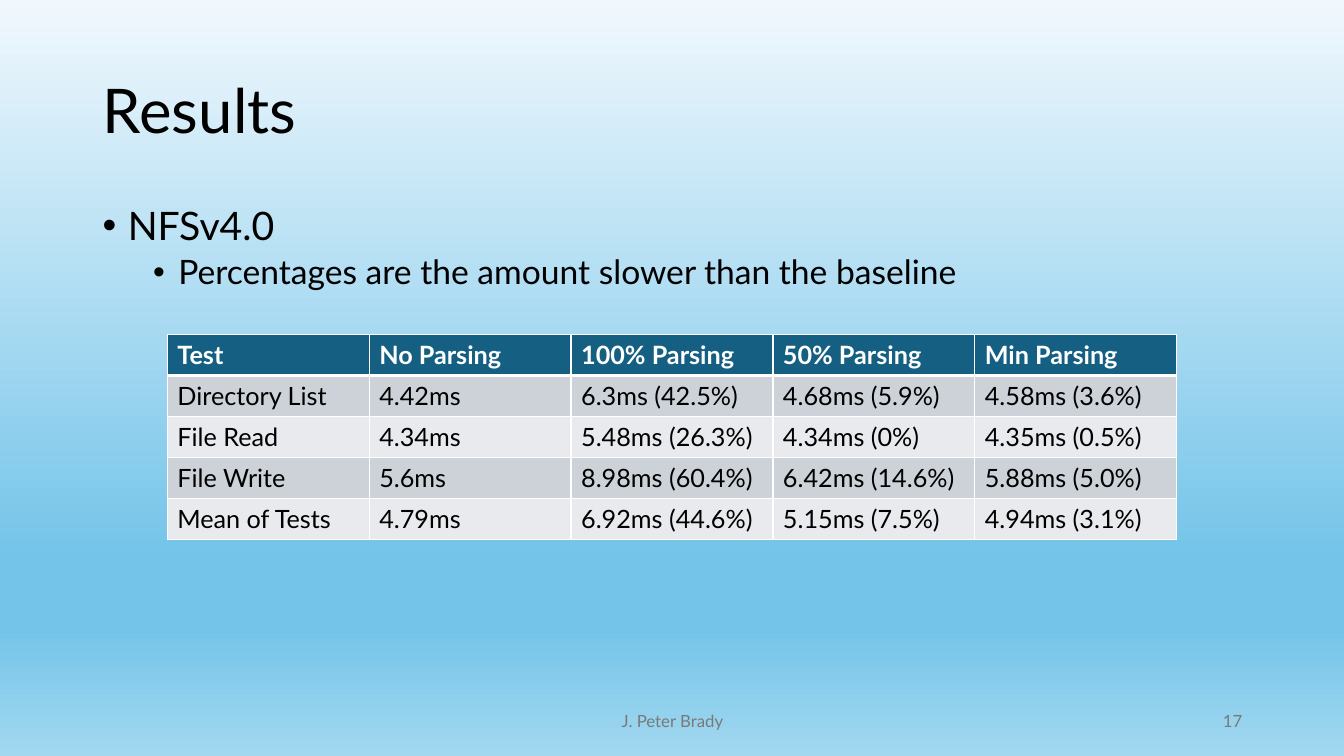
from dataclasses import dataclass

import lxml.etree
import pptx
import pptx.dml.color
import pptx.enum.text
import pptx.oxml.ns
import pptx.util

Inches = pptx.util.Inches
Pt = pptx.util.Pt
RGBColor = pptx.dml.color.RGBColor
Align = pptx.enum.text.PP_ALIGN
Anchor = pptx.enum.text.MSO_ANCHOR
qn = pptx.oxml.ns.qn

FONT = "Lato"
BLACK = RGBColor(0x00, 0x00, 0x00)
WHITE = RGBColor(0xFF, 0xFF, 0xFF)
GRAY = RGBColor(0x79, 0x79, 0x79)
HEAD = RGBColor(0x15, 0x60, 0x82)
BANDS = (RGBColor(0xE8, 0xEA, 0xED), RGBColor(0xCC, 0xD2, 0xD8))
SKY = (
    (0, RGBColor(0xF0, 0xF8, 0xFD)),
    (74, RGBColor(0x74, 0xC4, 0xE9)),
    (83, RGBColor(0x74, 0xC4, 0xE9)),
    (100, RGBColor(0xA2, 0xD8, 0xF0)),
)
ROWS = (
    ("Test", "No Parsing", "100% Parsing", "50% Parsing", "Min Parsing"),
    ("Directory List", "4.42ms", "6.3ms (42.5%)", "4.68ms (5.9%)", "4.58ms (3.6%)"),
    ("File Read", "4.34ms", "5.48ms (26.3%)", "4.34ms (0%)", "4.35ms (0.5%)"),
    ("File Write", "5.6ms", "8.98ms (60.4%)", "6.42ms (14.6%)", "5.88ms (5.0%)"),
    ("Mean of Tests", "4.79ms", "6.92ms (44.6%)", "5.15ms (7.5%)", "4.94ms (3.1%)"),
)


@dataclass
class Bullet:
    text: str
    size: int
    level: int
    left: float
    space: int


@dataclass
class Note:
    text: str
    left: float
    width: float
    align: Align


BULLETS = (
    Bullet("NFSv4.0", 28, 0, 0.25, 10),
    Bullet("Percentages are the amount slower than the baseline", 24, 1, 0.75, 5),
)
NOTES = (
    Note("17", 9.42, 3, Align.RIGHT),
    Note("J. Peter Brady", 4.42, 4.5, Align.CENTER),
)


def add_run(para, text: str, size: int, color: RGBColor, bold: bool = False) -> None:
    run = para.add_run()
    run.text = text
    run.font.name = FONT
    run.font.size = Pt(size)
    run.font.bold = bold
    run.font.color.rgb = color


def add_fill(parent, color: RGBColor) -> None:
    fill = lxml.etree.SubElement(parent, qn("a:solidFill"))
    lxml.etree.SubElement(fill, qn("a:srgbClr"), val=str(color))


def paint_sky(slide) -> None:
    fill = slide.background.fill
    fill.gradient()
    fill.gradient_angle = 270
    stops = slide.element.find(".//" + qn("a:gsLst"))
    for stop in list(stops):
        stops.remove(stop)
    for pos, color in SKY:
        stop = lxml.etree.SubElement(stops, qn("a:gs"), pos=str(pos * 1000))
        lxml.etree.SubElement(stop, qn("a:srgbClr"), val=str(color))


def draw_title(slide) -> None:
    title = slide.shapes.title
    title.left, title.top = Inches(0.92), Inches(0.4)
    title.width, title.height = Inches(11.5), Inches(1.45)
    title.text_frame.vertical_anchor = Anchor.MIDDLE
    para = title.text_frame.paragraphs[0]
    para.alignment = Align.LEFT
    para.line_spacing = 0.9
    add_run(para, "Results", 44, BLACK)


def add_box(slide, left: float, top: float, width: float, height: float):
    box = slide.shapes.add_textbox(
        Inches(left), Inches(top), Inches(width), Inches(height)
    )
    box.text_frame.word_wrap = True
    return box.text_frame


def draw_list(slide) -> None:
    frame = add_box(slide, 0.92, 2, 11.5, 1.32)
    for num, item in enumerate(BULLETS):
        para = frame.add_paragraph() if num else frame.paragraphs[0]
        para.level = item.level
        para.line_spacing = 0.9
        para.space_before = Pt(item.space)
        props = para._p.get_or_add_pPr()
        props.set("marL", str(Inches(item.left)))
        props.set("indent", str(Inches(-0.25)))
        lxml.etree.SubElement(props, qn("a:buFont"), typeface="Arial")
        lxml.etree.SubElement(props, qn("a:buChar"), char="•")
        add_run(para, item.text, item.size, BLACK)


def draw_note(slide, note: Note) -> None:
    frame = add_box(slide, note.left, 6.95, note.width, 0.4)
    frame.vertical_anchor = Anchor.MIDDLE
    para = frame.paragraphs[0]
    para.alignment = note.align
    add_run(para, note.text, 12, GRAY)


def add_edges(cell, top: int, bottom: int) -> None:
    """Give the cell white borders; top and bottom are widths in points."""
    props = cell._tc.get_or_add_tcPr()
    sides = (("a:lnL", 1), ("a:lnR", 1), ("a:lnT", top), ("a:lnB", bottom))
    for num, (tag, width) in enumerate(sides):
        line = lxml.etree.Element(qn(tag), w=str(Pt(width)))
        add_fill(line, WHITE)
        props.insert(num, line)


def draw_table(slide) -> None:
    frame = slide.shapes.add_table(
        len(ROWS), len(ROWS[0]),
        Inches(1.66), Inches(3.32), Inches(10.01), Inches(2.03),
    )
    for i, row in enumerate(ROWS):
        head = i == 0
        for j, text in enumerate(row):
            cell = frame.table.cell(i, j)
            cell.fill.solid()
            cell.fill.fore_color.rgb = HEAD if head else BANDS[i % 2]
            add_edges(cell, 3 if i == 1 else 1, 3 if head else 1)
            para = cell.text_frame.paragraphs[0]
            add_run(para, text, 18, WHITE if head else BLACK, head)


def main() -> None:
    deck = pptx.Presentation()
    deck.slide_width, deck.slide_height = Inches(13.33), Inches(7.5)
    slide = deck.slides.add_slide(deck.slide_layouts[5])
    paint_sky(slide)
    draw_title(slide)
    draw_list(slide)
    for note in NOTES:
        draw_note(slide, note)
    draw_table(slide)
    deck.save("out.pptx")


if __name__ == "__main__":
    main()
